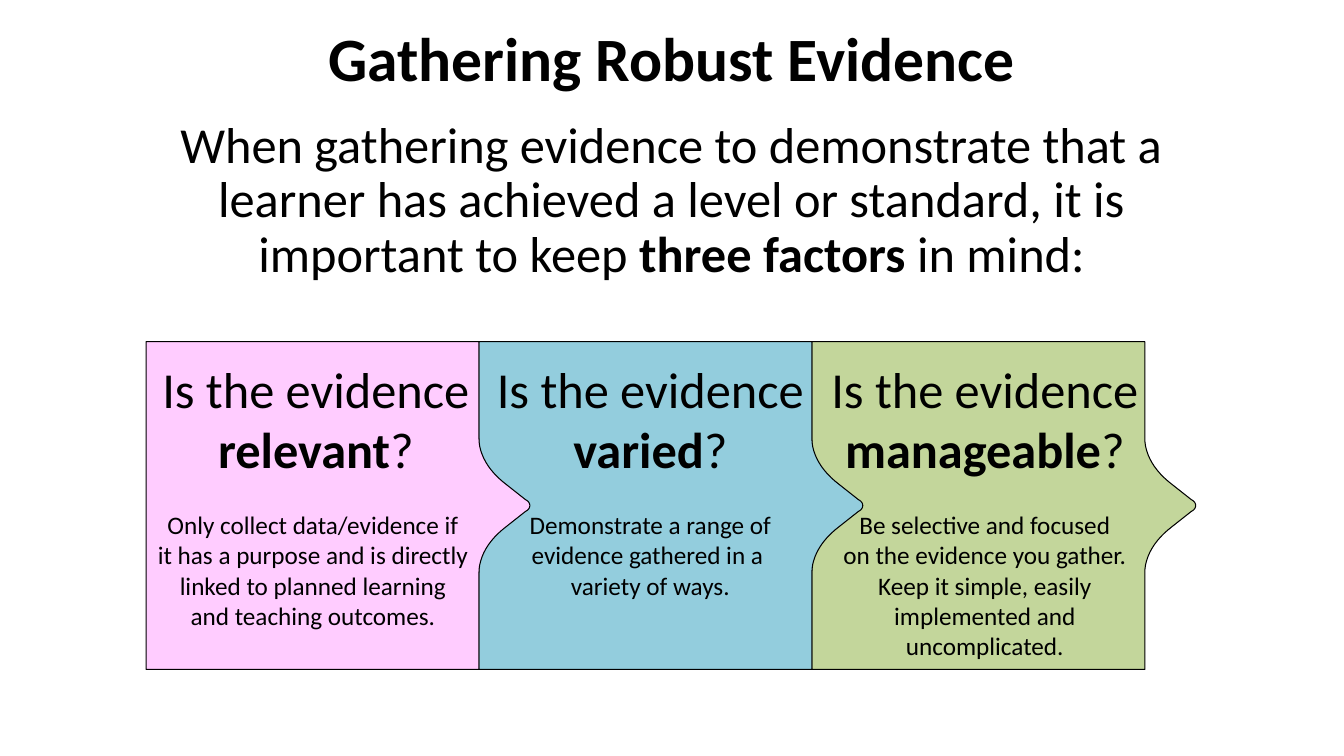
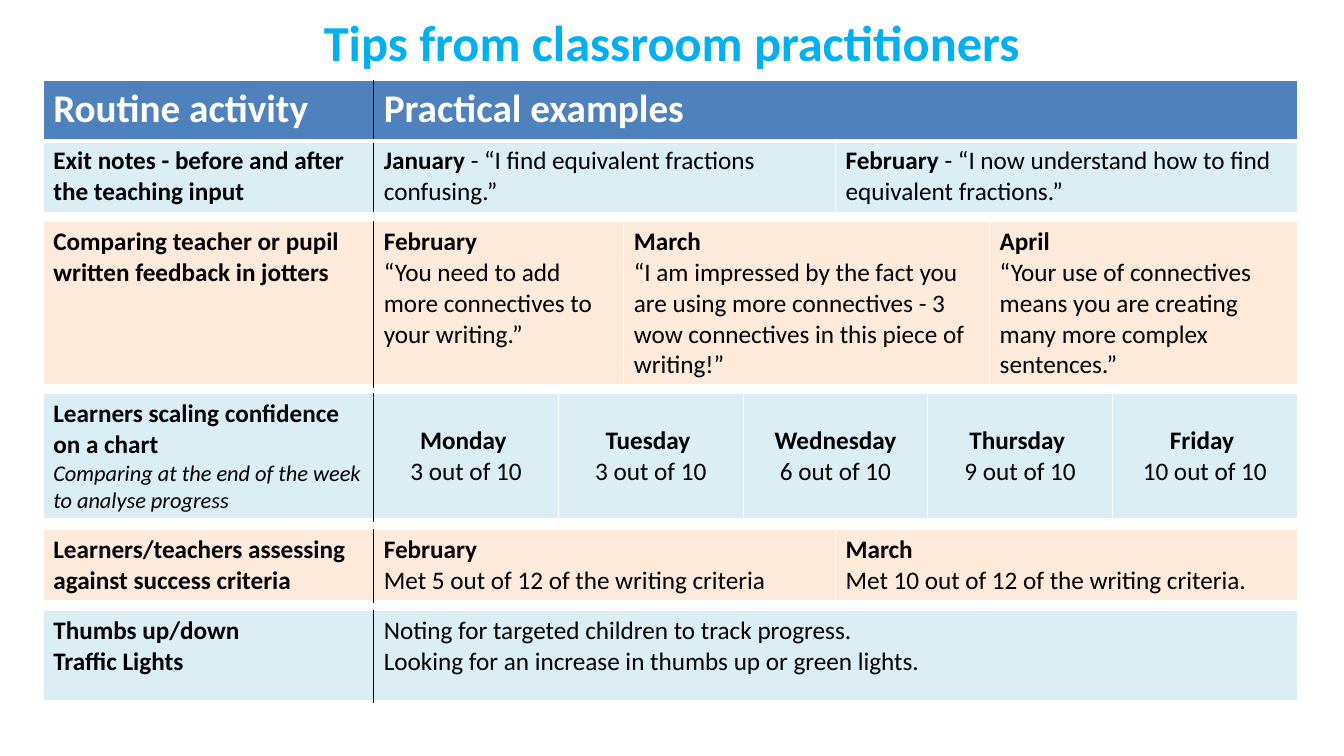
from lxml import etree
from pptx import Presentation
from pptx import util as u
from pptx.dml.color import RGBColor
from pptx.enum import text
from pptx.oxml import ns

COLORS = {
    "black": "000000", "white": "FFFFFF", "sky": "00B0F0", "header": "4F81BD",
    "pink": "FFCCFF", "blue": "93CDDD", "green": "C3D69B",
    "pale blue": "DBEEF4", "peach": "FDEADA",
}
FONT = "Calibri"
SLIDE_W, SLIDE_H = 33.87, 19.05
CENTER, LEFT = text.PP_ALIGN.CENTER, text.PP_ALIGN.LEFT
TOP, MIDDLE = text.MSO_ANCHOR.TOP, text.MSO_ANCHOR.MIDDLE


def rgb(name):
    return RGBColor.from_string(COLORS[name])


def bezier(p0, p1, p2, p3, steps=12):
    """Return points along a cubic curve, both ends included."""
    points = []
    for i in range(steps + 1):
        t = i / steps
        weights = ((1 - t) ** 3, 3 * t * (1 - t) ** 2, 3 * t * t * (1 - t), t ** 3)
        points.append(tuple(sum(w * p[k] for w, p in zip(weights, (p0, p1, p2, p3)))
                            for k in (0, 1)))
    return points


def nub_points():
    """Return the pointer outline, bottom to top, around its middle on the tile edge."""
    lower = bezier((0, 1.7), (0, 1.28), (0.25, 0.86), (0.69, 0.53))
    tip = bezier((1.17, 0.15), (1.32, 0.08), (1.32, -0.08), (1.17, -0.15))
    return lower + tip + [(x, -y) for x, y in reversed(lower)]


class Deck:
    def __init__(self):
        self.prs = Presentation()
        self.prs.slide_width, self.prs.slide_height = u.Cm(SLIDE_W), u.Cm(SLIDE_H)
        self.s = None

    def fill_text(self, tf, lines, size, color="black", align=LEFT, spacing=1.0):
        """Fill a text frame, one line per paragraph; *stars* enclose bold text."""
        for i, line in enumerate(lines):
            p = tf.add_paragraph() if i else tf.paragraphs[0]
            p.alignment, p.line_spacing = align, spacing
            for j, part in enumerate(line.split("*")):
                if part:
                    r = p.add_run()
                    r.text = part
                    r.font.name, r.font.size, r.font.bold = FONT, u.Pt(size), j % 2 == 1
                    r.font.color.rgb = rgb(color)

    def slide(self, title, top, height, size, color="black", spacing=1.0):
        self.s = self.prs.slides.add_slide(self.prs.slide_layouts[5])
        sp = self.s.shapes.title
        sp.left, sp.top = u.Cm(0), u.Cm(top)
        sp.width, sp.height = u.Cm(SLIDE_W), u.Cm(height)
        tf = sp.text_frame
        tf.auto_size, tf.vertical_anchor = text.MSO_AUTO_SIZE.NONE, MIDDLE
        self.fill_text(tf, [f"*{title}*"], size, color, CENTER, spacing)

    def textbox(self, left, top, width, height, lines, size, spacing=1.0):
        tf = self.s.shapes.add_textbox(*map(u.Cm, (left, top, width, height))).text_frame
        tf.word_wrap = True
        self.fill_text(tf, lines, size, align=CENTER, spacing=spacing)
        return tf

    def tile(self, left, top, width, height, fill):
        """Draw a box with a pointer on its right side."""
        right, middle, bottom = left + width, top + height / 2, top + height
        outline = [(left, bottom), (right, bottom)]
        outline += [(right + x, middle + y) for x, y in nub_points()]
        outline.append((right, top))
        builder = self.s.shapes.build_freeform(u.Cm(left), u.Cm(top))
        builder.add_line_segments([(u.Cm(x), u.Cm(y)) for x, y in outline], close=True)
        sp = builder.convert_to_shape()
        sp.shadow.inherit = False
        sp.fill.solid()
        sp.fill.fore_color.rgb = rgb(fill)
        sp.line.color.rgb, sp.line.width = rgb("black"), u.Pt(0.75)

    def borders(self, cell, row, col):
        """Outline a cell in white, with a black rule after the first column."""
        tc_pr = cell._tc.get_or_add_tcPr()
        sides = (("L", "black" if col == 1 else "white", 1),
                 ("R", "black" if col == 0 else "white", 1),
                 ("T", "white", 1),
                 ("B", "white", 1 if row else 3))
        for i, (side, color, width) in enumerate(sides):
            ln = etree.Element(ns.qn(f"a:ln{side}"), w=str(u.Pt(width)))
            fill = etree.SubElement(ln, ns.qn("a:solidFill"))
            etree.SubElement(fill, ns.qn("a:srgbClr"), val=COLORS[color])
            tc_pr.insert(i, ln)

    def table(self, left, top, widths, heights, fill, rows, centered=False):
        """Add a table; with two rows, the first is a header merged over the examples."""
        frame = self.s.shapes.add_table(len(rows), len(widths), u.Cm(left), u.Cm(top),
                                        u.Cm(sum(widths)), u.Cm(sum(heights)))
        tbl = frame.table
        tbl.first_row, tbl.horz_banding = len(rows) > 1, False
        for column, width in zip(tbl.columns, widths):
            column.width = u.Cm(width)
        for i, row in enumerate(rows):
            tbl.rows[i].height = u.Cm(heights[i])
            header = tbl.first_row and i == 0
            for j in range(len(widths)):
                cell = tbl.cell(i, j)
                cell.fill.solid()
                cell.fill.fore_color.rgb = rgb("header" if header else fill)
                self.borders(cell, i, j)
                if j < len(row):
                    mid = centered and j > 0
                    cell.vertical_anchor = MIDDLE if mid else TOP
                    self.fill_text(cell.text_frame, row[j], 28 if header else 18,
                                   "white" if header else "black", CENTER if mid else LEFT)
            if header:
                tbl.cell(0, 1).merge(tbl.cell(0, len(widths) - 1))
        return tbl


def factors_slide(deck):
    deck.slide("Gathering Robust Evidence", 0.43, 2.26, 44, spacing=0.9)
    deck.textbox(2.69, 2.9, 28.47, 4.19, [
        "When gathering evidence to demonstrate that a learner has achieved a level or "
        "standard, it is important to keep *three factors* in mind:"], 36, 0.9)
    factors = [
        ("pink", "relevant", ["Only collect data/evidence if ",
                              "it has a purpose and is directly ",
                              "linked to planned learning ", "and teaching outcomes. "]),
        ("blue", "varied", ["Demonstrate a range of", "evidence gathered in a ",
                            "variety of ways."]),
        ("green", "manageable", ["Be selective and focused",
                                 "on the evidence you gather. Keep it simple, easily",
                                 "implemented and uncomplicated."]),
    ]
    left, top, width, height = 3.68, 8.61, 8.39, 8.26
    # Right to left, so that each pointer lies over the next tile
    for i, (fill, _, _) in reversed(list(enumerate(factors))):
        deck.tile(left + i * width, top, width, height, fill)
    for i, (_, quality, details) in enumerate(factors):
        tf = deck.textbox(left + i * 8.43, 8.89, 8.56, 7.2,
                          [f"Is the evidence *{quality}*?"] + details, 18)
        for r in tf.paragraphs[0].runs:
            r.font.size = u.Pt(36)
        tf.paragraphs[1].space_before = u.Pt(22)


def tips_slide(deck):
    deck.slide("Tips from classroom practitioners", 0.13, 1.8, 36, "sky")
    left, top, gap = 1.09, 2.03, 0.26
    label_w, examples_w = 8.33, 23.27
    halves = [examples_w / 2] * 2
    scores = [("Monday ", 3), ("Tuesday ", 3), ("Wednesday", 6), ("Thursday ", 9),
              ("Friday ", 10)]
    activities = [
        (halves, [1.52, 1.78], [
            [["*Routine activity*"], ["*Practical examples*"]],
            [["*Exit notes - before and after the teaching input*"],
             ["*January* - “I find equivalent fractions confusing.”"],
             ["*February* - “I now understand how to find equivalent fractions.”"]]]),
        ([6.3, 9.22, 7.75], [4.06], [
            [["*Comparing teacher or pupil written feedback in jotters*"],
             ["*February*", "“You need to add more connectives to your writing.”"],
             ["*March*", "“I am impressed by the fact you are using more connectives - 3 "
                         "wow connectives in this piece of writing!”"],
             ["*April*", "“Your use of connectives means you are creating many more "
                         "complex sentences.”"]]]),
        ([examples_w / len(scores)] * len(scores), [3.18], [
            [["*Learners scaling confidence on a chart*",
              "Comparing at the end of the week to analyse progress"]]
            + [[f"*{day}*", f"{score} out of 10"] for day, score in scores]]),
        (halves, [1.78], [
            [["*Learners/teachers assessing against success criteria*"],
             ["*February*", "Met 5 out of 12 of the writing criteria"],
             ["*March*", "Met 10 out of 12 of the writing criteria."]]]),
        ([examples_w], [2.29], [
            [["*Thumbs up/down*", "*Traffic Lights*"],
             ["Noting for targeted children to track progress.",
              "Looking for an increase in thumbs up or green lights."]]]),
    ]
    for i, (widths, heights, rows) in enumerate(activities):
        is_scale = len(widths) == len(scores)
        tbl = deck.table(left, top, [label_w] + widths, heights,
                         "peach" if i % 2 else "pale blue", rows, centered=is_scale)
        if is_scale:
            note = tbl.cell(0, 0).text_frame.paragraphs[1].runs[0].font
            note.size, note.italic = u.Pt(16), True
        top += sum(heights) + gap


def main():
    deck = Deck()
    factors_slide(deck)
    tips_slide(deck)
    deck.prs.save("out.pptx")


if __name__ == "__main__":
    main()
